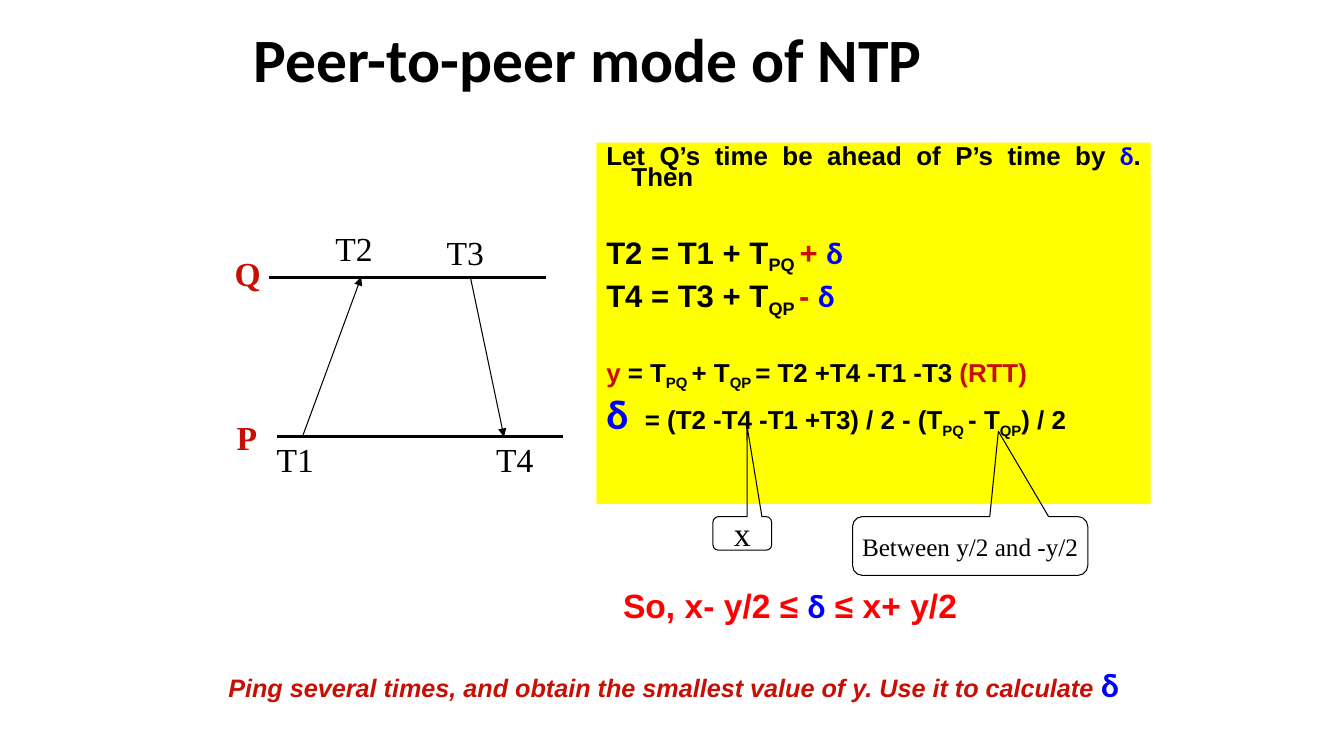
from lxml import etree
from pptx import Presentation, util as u
from pptx.dml.color import RGBColor
from pptx.enum import shapes, text
from pptx.oxml.ns import qn

PX = u.Inches(1) // 96
BLACK = RGBColor(0x00, 0x00, 0x00)
CRIMSON = RGBColor(0xC7, 0x0F, 0x05)
RED = RGBColor(0xFF, 0x00, 0x00)
BLUE = RGBColor(0x00, 0x00, 0xFF)
YELLOW = RGBColor(0xFF, 0xFF, 0x00)
SERIF = "Times New Roman"

presentation = Presentation()
presentation.slide_width = 1280 * PX
presentation.slide_height = 720 * PX
slide = presentation.slides.add_slide(presentation.slide_layouts[6])


def add_text(left, top, width, height, wrap=True):
    box = slide.shapes.add_textbox(left * PX, top * PX, width * PX, height * PX)
    box.text_frame.word_wrap = wrap
    return box


def write(paragraph, size, runs, name="Arial", bold=True):
    paragraph.font.size = u.Pt(size)
    paragraph.font.bold = bold
    for words, color, *subscript in runs:
        run = paragraph.add_run()
        run.text = words
        run.font.name = "Calibri" if words.strip() == "δ" else name
        run.font.color.rgb = color
        if subscript:
            run._r.get_or_add_rPr().set("baseline", "-25000")
    return paragraph


title = add_text(232, 0, 816, 120)
title.text_frame.vertical_anchor = text.MSO_ANCHOR.MIDDLE
write(title.text_frame.paragraphs[0], 44,
      [("Peer-to-peer mode of NTP", BLACK)], "Calibri").line_spacing = 0.9

derivation = add_text(568, 136, 528, 344)
derivation.fill.solid()
derivation.fill.fore_color.rgb = YELLOW
PQ = ("PQ ", BLACK, True)
QP = ("QP ", BLACK, True)
equations = [
    (18.5, 10, [("Let Q’s time be ahead of P’s time by ", BLACK), ("δ", BLUE),
                (". Then", BLACK)]),
    (22.2, 35, [("T2 = T1 + T", BLACK), PQ, ("+ ", CRIMSON), ("δ", BLUE)]),
    (22.2, 10, [("T4 = T3 + T", BLACK), QP, ("- ", CRIMSON), ("δ", BLUE)]),
    (18.5, 35, [("y ", CRIMSON), ("= T", BLACK), PQ, ("+ T", BLACK), QP,
                ("= T2 +T4 -T1 -T3 ", BLACK), ("(RTT)", CRIMSON)]),
    (18.5, 10, [("δ ", BLUE), (" = (T2 -T4 -T1 +T3) / 2 - (T", BLACK), PQ,
                ("- T", BLACK), ("QP", BLACK, True), (") / 2", BLACK)]),
]
for index, (size, gap, runs) in enumerate(equations):
    frame = derivation.text_frame
    paragraph = frame.add_paragraph() if index else frame.paragraphs[0]
    write(paragraph, size, runs)
    paragraph.alignment = text.PP_ALIGN.JUSTIFY
    paragraph.line_spacing = 0.7
    paragraph.space_before = u.Pt(gap)
    properties = paragraph._p.get_or_add_pPr()
    properties.set("marL", str(24 * PX))
    properties.set("indent", str(-24 * PX))
paragraph.runs[0].font.size = u.Pt(29.6)

bounds = add_text(584, 552, 367, 48)
write(bounds.text_frame.paragraphs[0], 24,
      [("So, x- y/2 ≤ ", RED), ("δ", BLUE), (" ≤ x+ y/2", RED)])

Q_LINE, P_LINE = 264, 416
for x1, y1, x2, y2 in [(256, Q_LINE, 520, Q_LINE), (264, P_LINE, 536, P_LINE),
                       (288, P_LINE, 344, Q_LINE), (448, Q_LINE, 480, P_LINE)]:
    message = y1 != y2
    line = slide.shapes.add_connector(
        shapes.MSO_CONNECTOR.STRAIGHT, x1 * PX, y1 * PX, x2 * PX, y2 * PX)
    line.line.color.rgb = BLACK
    line.line.width = u.Pt(0.75 if message else 2.25)
    if message:
        etree.SubElement(line.line._get_or_add_ln(), qn("a:tailEnd"), type="triangle")
    etree.SubElement(line._element.spPr, qn("a:effectLst"))

for label, left, top, width, color in [
        ("T2", 310, 212, 55, BLACK), ("T1", 254, 413, 55, BLACK),
        ("T4", 463, 413, 55, BLACK), ("T3", 416, 216, 55, BLACK),
        ("Q", 214, 236, 44, CRIMSON), ("P", 216, 392, 38, CRIMSON)]:
    box = add_text(left, top, width, 48, wrap=False)
    write(box.text_frame.paragraphs[0], 24, [(label, color)], SERIF, color == CRIMSON)

advice = add_text(208, 632, 896, 45)
paragraph = write(advice.text_frame.paragraphs[0], 18, [
    ("Ping several times, and obtain the smallest value of y. Use it to calculate ",
     CRIMSON), ("δ", BLUE)])
paragraph.alignment = text.PP_ALIGN.JUSTIFY
paragraph.line_spacing = 0.9
paragraph.runs[0].font.italic = True
paragraph.runs[1].font.size = u.Pt(24)

for words, left, width, height, size, tip_x, tip_y in [
        ("x", 679, 56, 32, 24, 0.08, -3.21),
        ("Between y/2 and -y/2", 812, 224, 56, 18, 0.12, -1.95)]:
    callout = slide.shapes.add_shape(
        shapes.MSO_SHAPE.ROUNDED_RECTANGULAR_CALLOUT,
        left * PX, 492 * PX, width * PX, height * PX)
    callout.adjustments[0] = tip_x
    callout.adjustments[1] = tip_y
    callout.shadow.inherit = False
    callout.fill.background()
    callout.line.color.rgb = BLACK
    callout.line.width = u.Pt(0.75)
    callout.text_frame.word_wrap = False
    callout.text_frame.vertical_anchor = text.MSO_ANCHOR.MIDDLE
    paragraph = write(callout.text_frame.paragraphs[0], size, [(words, BLACK)], SERIF, False)
    paragraph.alignment = text.PP_ALIGN.CENTER

presentation.save("out.pptx")
